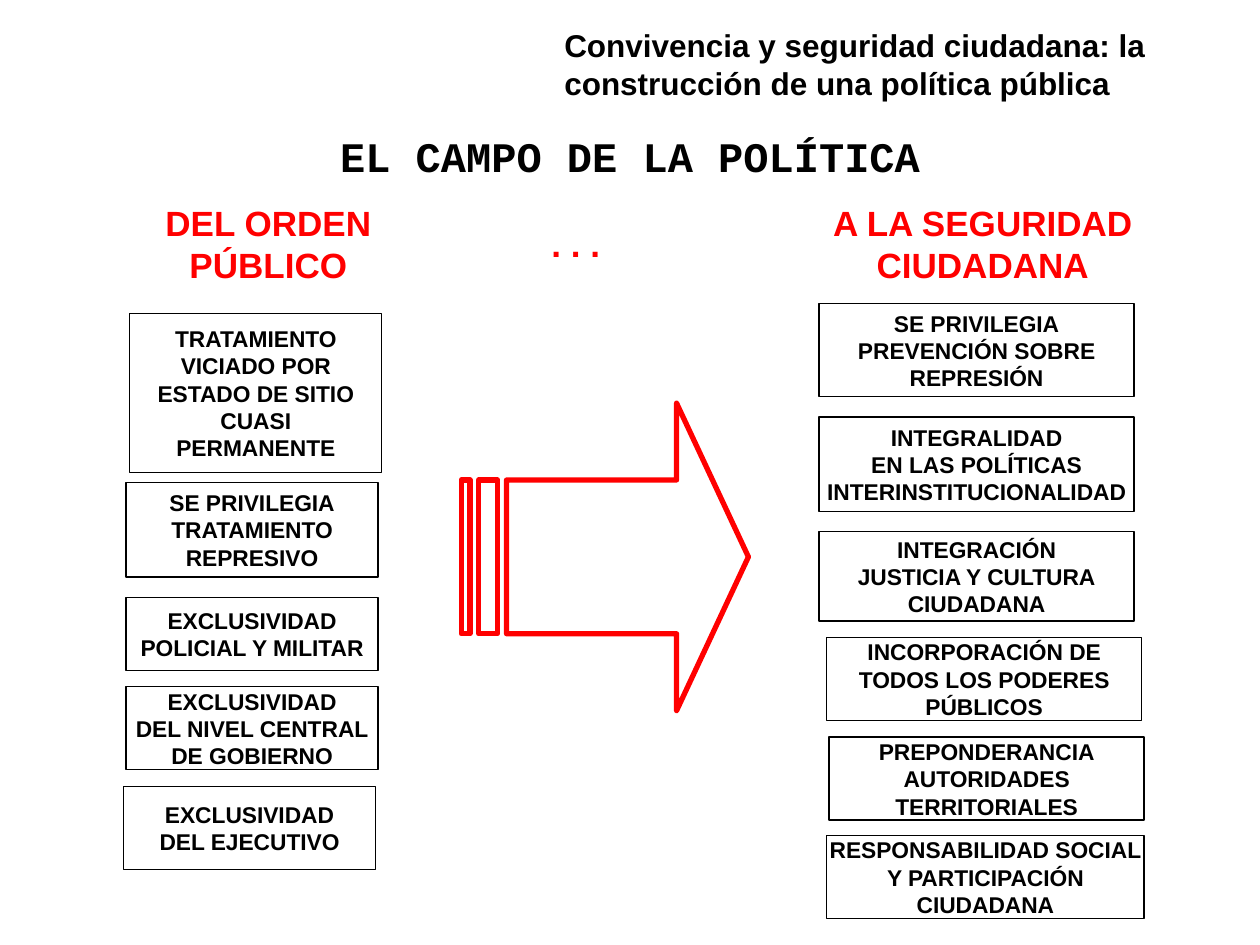
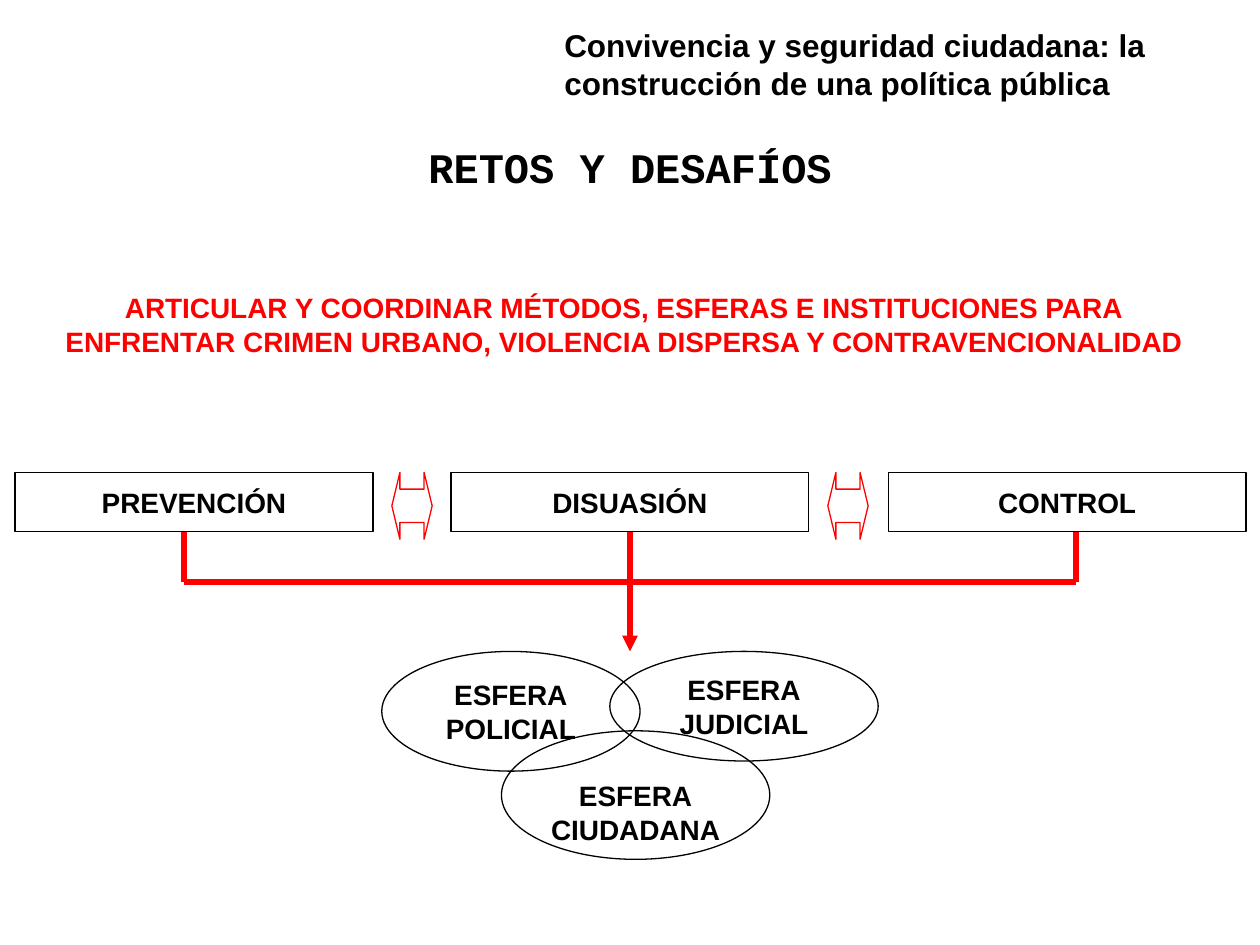
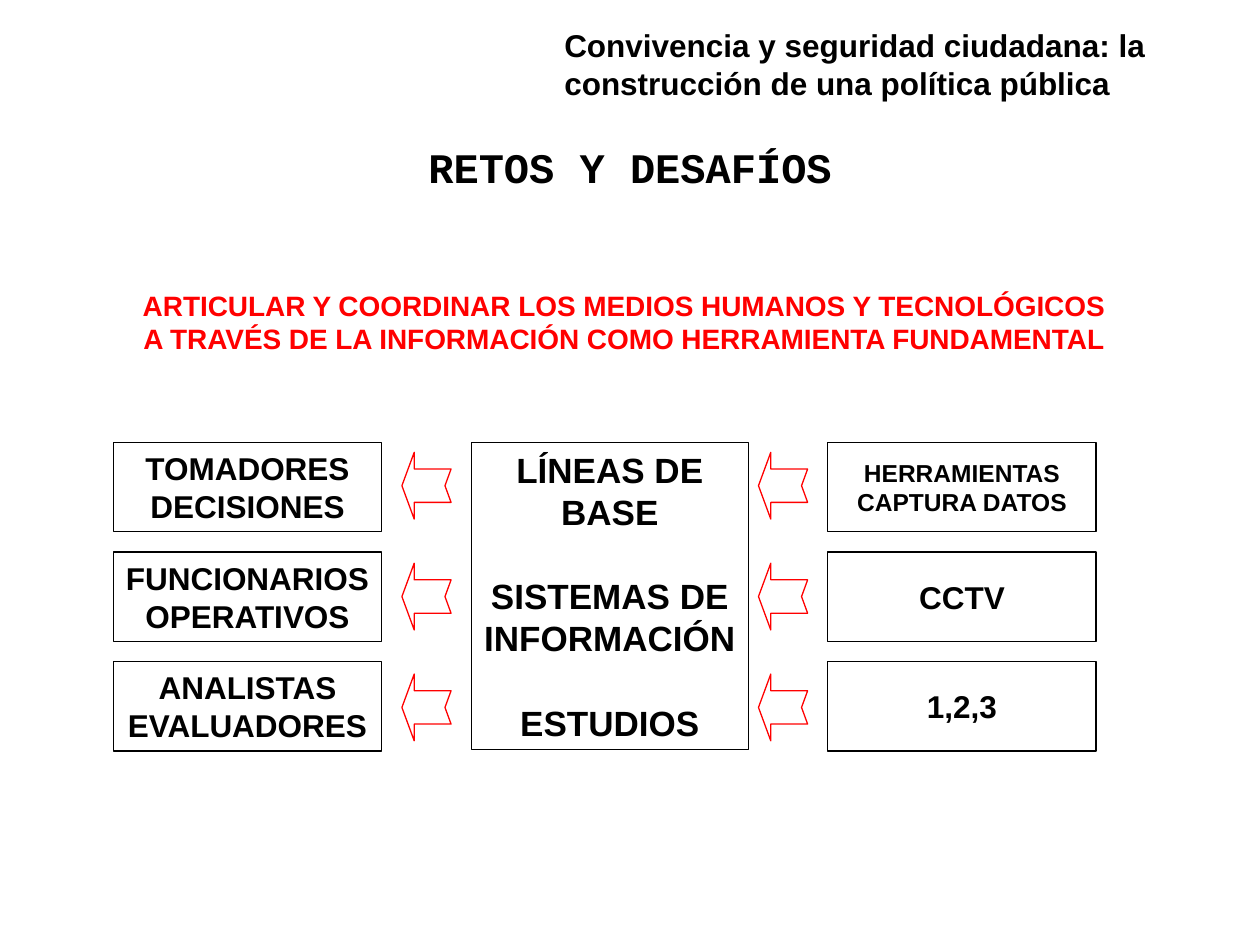
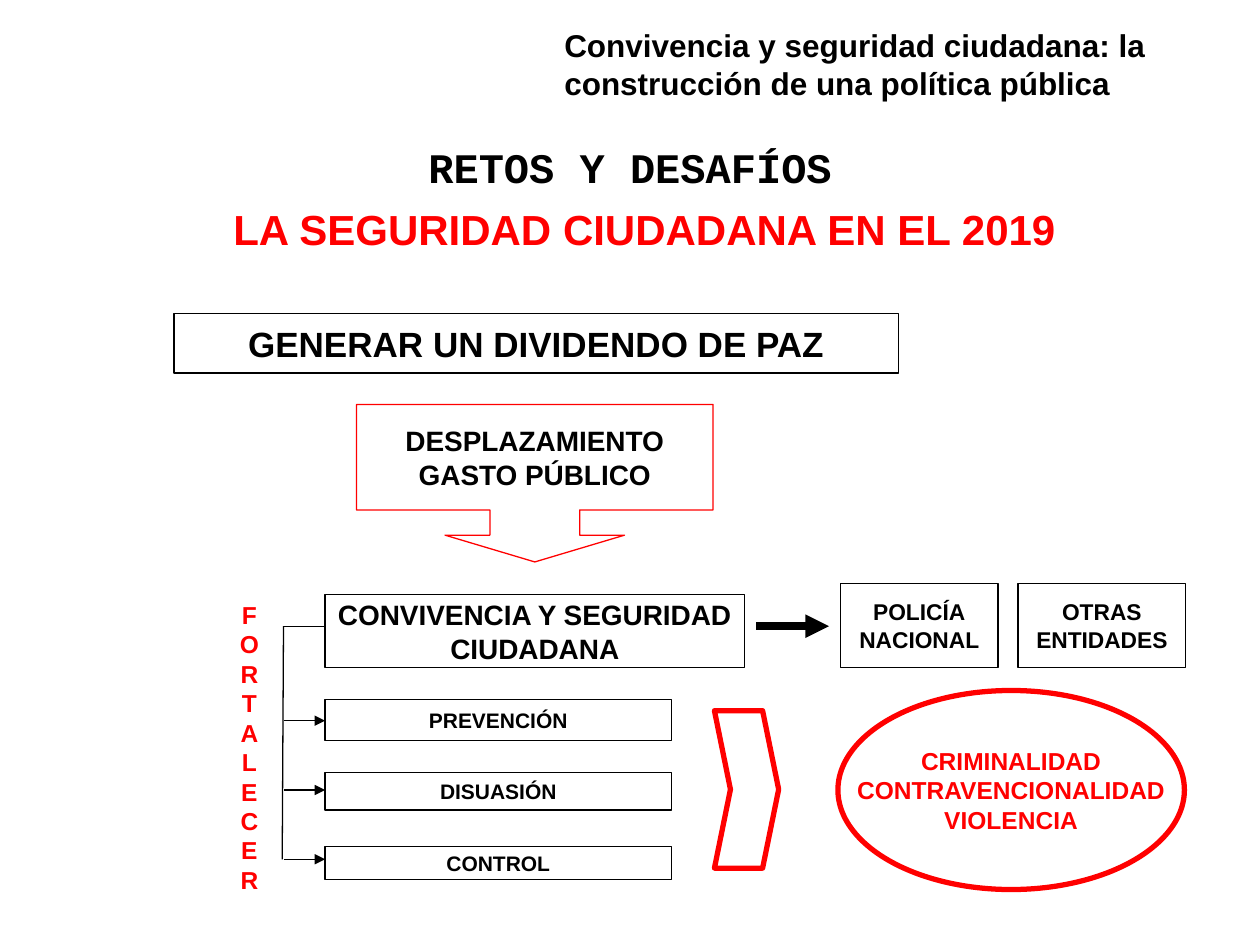
from lxml.etree import SubElement
from pptx import Presentation
from pptx.dml.color import RGBColor
from pptx.enum.shapes import MSO_CONNECTOR, MSO_SHAPE
from pptx.enum.text import MSO_ANCHOR, PP_ALIGN
from pptx.oxml.ns import qn
from pptx.util import Inches, Pt

BLACK, RED = "000000", "FF0000"
THIN, THICK = 0.75, 3


def rgb(code):
    """Turn a hex string into a colour."""
    return RGBColor.from_string(code)


def inches(*lengths):
    """Convert several lengths to EMU."""
    return [Inches(length) for length in lengths]


class Deck:
    """Hold the shared style and the slide being built."""

    def __init__(self):
        """Start an empty 10 by 7.5 inch presentation."""
        self.presentation = Presentation()
        self.presentation.slide_width, self.presentation.slide_height = inches(10, 7.5)
        self.slide = None

    def start(self, heading, top=1.07, height=0.48):
        """Add a slide with its heading and the running header."""
        self.slide = self.presentation.slides.add_slide(self.presentation.slide_layouts[6])
        self.label((0.5, top, 9, height), heading, 24, BLACK, font="Courier New",
                   anchor=MSO_ANCHOR.TOP, wrap=True)
        self.label((4.38, 0.16, 5.35, 0.68),
                   "Convivencia y seguridad ciudadana: la construcción de una política pública",
                   18, BLACK, align=PP_ALIGN.LEFT, anchor=MSO_ANCHOR.TOP, wrap=True)

    def fill_text(self, frame, text, size, color, font="Arial", align=PP_ALIGN.CENTER,
                  anchor=MSO_ANCHOR.MIDDLE, wrap=False, drop=0):
        """Fill a frame, one paragraph a line; a blank line opens a gap."""
        layout = {"word_wrap": wrap, "vertical_anchor": anchor,
                  "margin_top": Inches(0.05 + drop)}
        for name, value in layout.items():
            setattr(frame, name, value)
        paragraph = frame.paragraphs[0]
        for block_index, block in enumerate(text.split("\n\n")):
            for line_index, line in enumerate(block.split("\n")):
                if block_index or line_index:
                    paragraph = frame.add_paragraph()
                if block_index and not line_index:
                    paragraph.space_before = Pt(size * 1.2)
                paragraph.alignment = align
                run = paragraph.add_run()
                run.text = line
                for name, value in {"name": font, "size": Pt(size), "bold": True}.items():
                    setattr(run.font, name, value)
                run.font.color.rgb = rgb(color)

    def label(self, area, text, size, color=RED, **layout):
        """Add free-standing text."""
        box = self.slide.shapes.add_textbox(*inches(*area))
        self.fill_text(box.text_frame, text, size, color, **layout)

    def outline(self, shape, color, width):
        """Leave a shape unfilled with a plain line."""
        shape.shadow.inherit = False
        shape.fill.background()
        shape.line.color.rgb = rgb(color)
        shape.line.width = Pt(width)

    def box(self, area, text="", size=13, kind=MSO_SHAPE.RECTANGLE, color=BLACK,
            width=THIN, ink=BLACK, adjust=(), flip=False, drop=0):
        """Add an outlined preset shape, with or without text."""
        shape = self.slide.shapes.add_shape(kind, *inches(*area))
        self.outline(shape, color, width)
        for index, value in enumerate(adjust):
            shape.adjustments[index] = value
        if flip:
            shape._element.spPr.find(qn("a:xfrm")).set("flipH", "1")
        if text:
            self.fill_text(shape.text_frame, text, size, ink, drop=drop)

    def line(self, begin, end, color=BLACK, width=THIN, arrow=None):
        """Add a straight line; arrow names the end that gets a head."""
        connector = self.slide.shapes.add_connector(
            MSO_CONNECTOR.STRAIGHT, *inches(*begin, *end))
        connector.line.color.rgb = rgb(color)
        connector.line.width = Pt(width)
        properties = connector._element.spPr
        if arrow:
            SubElement(properties.find(qn("a:ln")), qn(f"a:{arrow}")).set("type", "triangle")
        SubElement(properties, qn("a:effectLst"))

    def outlines(self, contours, color, width):
        """Add one freeform made of several closed contours."""
        first, *rest = [[tuple(inches(*point)) for point in contour] for contour in contours]
        builder = self.slide.shapes.build_freeform(*first[0], scale=1.0)
        builder.add_line_segments(first[1:], close=True)
        for contour in rest:
            builder.move_to(*contour[0])
            builder.add_line_segments(contour[1:], close=True)
        self.outline(builder.convert_to_shape(), color, width)


def policy_field(deck):
    """Contrast public order with citizen security."""
    deck.start("EL CAMPO DE LA POLÍTICA", 0.99, 0.31)
    security = [
        (6.5, 2.41, 2.5, 0.74, "SE PRIVILEGIA\nPREVENCIÓN SOBRE\nREPRESIÓN"),
        (6.5, 3.31, 2.5, 0.75, "INTEGRALIDAD\nEN LAS POLÍTICAS\nINTERINSTITUCIONALIDAD"),
        (6.5, 4.22, 2.5, 0.71, "INTEGRACIÓN\nJUSTICIA Y CULTURA\nCIUDADANA"),
        (6.56, 5.06, 2.5, 0.66, "INCORPORACIÓN DE\nTODOS LOS PODERES\nPÚBLICOS"),
        (6.58, 5.85, 2.5, 0.66, "PREPONDERANCIA\nAUTORIDADES\nTERRITORIALES"),
        (6.56, 6.63, 2.52, 0.66, "RESPONSABILIDAD SOCIAL\nY PARTICIPACIÓN\nCIUDADANA"),
    ]
    public_order = [
        (1.03, 2.49, 2, 1.26, "TRATAMIENTO\nVICIADO POR\nESTADO DE SITIO\nCUASI\nPERMANENTE"),
        (1, 3.83, 2, 0.75, "SE PRIVILEGIA\nTRATAMIENTO\nREPRESIVO"),
        (1, 4.74, 2, 0.58, "EXCLUSIVIDAD\nPOLICIAL Y MILITAR"),
        (1, 5.45, 2, 0.66, "EXCLUSIVIDAD\nDEL NIVEL CENTRAL\nDE GOBIERNO"),
        (0.98, 6.24, 2, 0.66, "EXCLUSIVIDAD\nDEL EJECUTIVO"),
    ]
    for *area, trait in security + public_order:
        deck.box(area, trait)
    for left, side in ((0.83, "DEL ORDEN PÚBLICO"), (6.5, "A LA SEGURIDAD CIUDADANA"),
                       (3.27, ". . .")):
        deck.label((left, 1.7, 2.6, 0.47), side, 20)
    top, bottom = 3.81, 5.03
    arrow = [(5.37, 3.2), (5.37, top), (4.02, top), (4.02, bottom), (5.37, bottom),
             (5.37, 5.64), (5.94, 4.42)]
    stripes = [[(left, top), (left, bottom), (right, bottom), (right, top)]
               for left, right in ((3.8, 3.95), (3.66, 3.73))]
    deck.outlines([arrow, *stripes], RED, THICK)


def methods_and_spheres(deck):
    """Link the three methods to the three spheres."""
    deck.start("RETOS Y DESAFÍOS")
    for left, method in ((0.12, "PREVENCIÓN"), (3.58, "DISUASIÓN"), (7.05, "CONTROL")):
        deck.box((left, 3.75, 2.84, 0.47), method, 16)
    spheres = [
        (3.03, 5.17, 2.05, 0.95, "ESFERA\nPOLICIAL", 0),
        (3.98, 5.8, 2.13, 1.02, "ESFERA\nCIUDADANA", 0.27),
        (4.84, 5.17, 2.13, 0.87, "ESFERA\nJUDICIAL", 0),
    ]
    for *area, sphere, drop in spheres:
        deck.box(area, sphere, 16, MSO_SHAPE.OVAL, drop=drop)
    for left in (3.11, 6.57):
        deck.box((left, 3.75, 0.32, 0.53), kind=MSO_SHAPE.LEFT_RIGHT_ARROW, color=RED,
                 adjust=(0.5, 0.2))
    deck.label((0.27, 2.38, 9.37, 0.39),
               "ARTICULAR Y COORDINAR MÉTODOS, ESFERAS E INSTITUCIONES PARA\n"
               "ENFRENTAR CRIMEN URBANO, VIOLENCIA DISPERSA Y CONTRAVENCIONALIDAD", 16)
    left, middle, right = 1.46, 5, 8.54
    deck.line((left, 4.62), (right, 4.62), RED, THICK)
    for x in (left, right):
        deck.line((x, 4.62), (x, 4.22), RED, THICK)
    deck.line((middle, 5.17), (middle, 4.22), RED, THICK, "headEnd")


def information_flow(deck):
    """Show information going from tools to its users."""
    deck.start("RETOS Y DESAFÍOS")
    deck.label((0.27, 2.36, 9.37, 0.39),
               "ARTICULAR Y COORDINAR LOS MEDIOS HUMANOS Y TECNOLÓGICOS\n"
               "A TRAVÉS DE LA INFORMACIÓN COMO HERRAMIENTA FUNDAMENTAL", 16)
    deck.box((3.74, 3.51, 2.2, 2.44),
             "LÍNEAS DE\nBASE\n\nSISTEMAS DE\nINFORMACIÓN\n\nESTUDIOS", 20)
    rows = [
        ("TOMADORES\nDECISIONES", "HERRAMIENTAS\nCAPTURA DATOS", 14),
        ("FUNCIONARIOS\nOPERATIVOS", "CCTV", 18),
        ("ANALISTAS\nEVALUADORES", "1,2,3", 18),
    ]
    for index, (user, tool, tool_size) in enumerate(rows):
        top = 3.51 + 0.87 * index
        deck.box((0.9, top, 2.13, 0.71), user, 18)
        deck.box((6.57, top, 2.13, 0.71), tool, tool_size)
        for left in (3.19, 6.02):
            deck.box((left, 3.59 + 0.88 * index, 0.39, 0.53),
                     kind=MSO_SHAPE.NOTCHED_RIGHT_ARROW, color=RED,
                     adjust=(0.5, 0.25), flip=True)


def peace_dividend(deck):
    """Trace the peace dividend to citizen security."""
    deck.start("RETOS Y DESAFÍOS")
    deck.label((0.43, 1.62, 9.37, 0.39), "LA SEGURIDAD CIUDADANA EN EL 2019", 24)
    deck.box((1.38, 2.49, 5.75, 0.47), "GENERAR UN DIVIDENDO DE PAZ", 20)
    deck.box((2.58, 4.72, 3.33, 0.58), "CONVIVENCIA Y SEGURIDAD\nCIUDADANA", 16)
    deck.box((2.83, 3.21, 2.83, 1.25), "DESPLAZAMIENTO\nGASTO PÚBLICO", 16,
             MSO_SHAPE.DOWN_ARROW_CALLOUT, RED, adjust=(0.57, 0.57, 0.17, 0.67))
    methods = [(5.55, 0.33, "PREVENCIÓN"), (6.13, 0.3, "DISUASIÓN"), (6.72, 0.26, "CONTROL")]
    for index, (top, height, method) in enumerate(methods):
        deck.box((2.58, top, 2.75, height), method, 12)
        branch = 5.72 + 0.55 * index
        deck.line((2.58, branch), (2.25, branch), arrow="headEnd")
    deck.line((2.58, 4.97), (2.25, 4.97))
    deck.line((2.25, 4.97), (2.24, 6.82))
    deck.box((6.65, 5.48, 2.75, 1.58), "CRIMINALIDAD\nCONTRAVENCIONALIDAD\nVIOLENCIA", 14,
             MSO_SHAPE.OVAL, RED, THICK, RED)
    deck.box((5.67, 5.64, 0.51, 1.25), kind=MSO_SHAPE.CHEVRON, color=RED, width=THICK,
             adjust=(0.25,))
    deck.box((6.67, 4.63, 1.25, 0.67), "POLICÍA\nNACIONAL")
    deck.box((8.08, 4.63, 1.33, 0.67), "OTRAS\nENTIDADES")
    deck.line((6, 4.97), (6.58, 4.97), width=4.5, arrow="tailEnd")
    deck.label((1.48, 5.43, 1, 1), "\n".join("FORTALECER"), 14)


def main():
    """Build the four slides and save them."""
    deck = Deck()
    for build in (policy_field, methods_and_spheres, information_flow, peace_dividend):
        build(deck)
    deck.presentation.save("out.pptx")


if __name__ == "__main__":
    main()
